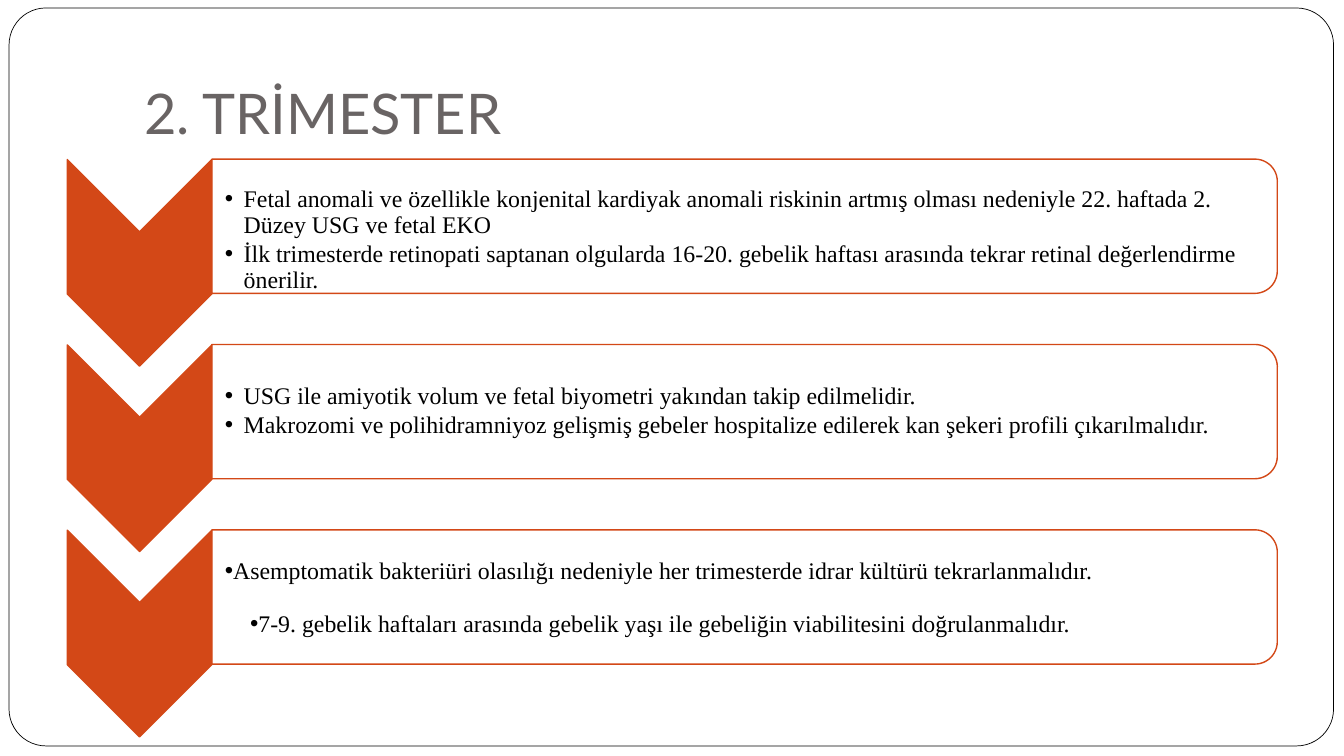
from dataclasses import dataclass

from lxml import etree
from pptx import Presentation
from pptx.dml.color import RGBColor
from pptx.enum.shapes import MSO_SHAPE
from pptx.enum.text import MSO_ANCHOR, MSO_AUTO_SIZE, PP_ALIGN
from pptx.oxml.ns import qn
from pptx.shapes.autoshape import Shape
from pptx.slide import Slide
from pptx.text.text import TextFrame
from pptx.util import Pt

ROUND_RECT = MSO_SHAPE.ROUNDED_RECTANGLE
CHEVRON = MSO_SHAPE.CHEVRON
PANEL = MSO_SHAPE.ROUND_2_SAME_RECTANGLE
BOTTOM, MIDDLE = MSO_ANCHOR.BOTTOM, MSO_ANCHOR.MIDDLE
NO_FIT = MSO_AUTO_SIZE.NONE
LEFT = PP_ALIGN.LEFT
COMPARISON_LAYOUT = 4
ROW_PITCH = 132.4


@dataclass(frozen=True)
class Theme:
    paper: RGBColor = RGBColor(0xFF, 0xFF, 0xFF)
    ink: RGBColor = RGBColor(0x00, 0x00, 0x00)
    accent: RGBColor = RGBColor(0xD3, 0x48, 0x17)
    heading: RGBColor = RGBColor(0x69, 0x64, 0x64)
    title_font: str = "Lato"
    body_font: str = "Times New Roman"
    title_size: float = 40
    body_size: float = 17


@dataclass(frozen=True)
class Box:
    left: float
    top: float
    width: float
    height: float


@dataclass(frozen=True)
class Bullet:
    text: str
    margin: float = 13.5
    hanging: float = 13.5
    line_spacing: float = 0.9
    after: float = 2.55


@dataclass(frozen=True)
class Step:
    placeholder: int
    bullets: tuple[Bullet, ...]
    inset_top: float = 0.7


THEME = Theme()
STEPS = (
    Step(1, (
        Bullet("Fetal anomali ve özellikle konjenital kardiyak anomali riskinin artmış "
               "olması nedeniyle 22. haftada 2. Düzey USG ve fetal EKO"),
        Bullet("İlk trimesterde retinopati saptanan olgularda 16-20. gebelik haftası "
               "arasında tekrar retinal değerlendirme önerilir."),
    ), inset_top=21),
    Step(2, (
        Bullet("USG ile amiyotik volum ve fetal biyometri yakından takip edilmelidir."),
        Bullet("Makrozomi ve polihidramniyoz gelişmiş gebeler hospitalize edilerek "
               "kan şekeri profili çıkarılmalıdır."),
    )),
    Step(3, (
        Bullet("Asemptomatik bakteriüri olasılığı nedeniyle her trimesterde idrar "
               "kültürü tekrarlanmalıdır.",
               margin=0, hanging=0, line_spacing=1, after=20),
        Bullet("7-9. gebelik haftaları arasında gebelik yaşı ile gebeliğin "
               "viabilitesini doğrulanmalıdır.", margin=18, hanging=0),
    )),
)


def place(sp: Shape, box: Box) -> None:
    sp.left, sp.top = Pt(box.left), Pt(box.top)
    sp.width, sp.height = Pt(box.width), Pt(box.height)


def add_outline(s: Slide, kind: MSO_SHAPE, box: Box, fill: RGBColor, line: RGBColor,
                weight: float = 1, turn: float = 0) -> Shape:
    sp = s.shapes.add_shape(kind, Pt(box.left), Pt(box.top), Pt(box.width), Pt(box.height))
    sp.shadow.inherit = False
    sp.rotation = turn
    sp.fill.solid()
    sp.fill.fore_color.rgb = fill
    sp.line.color.rgb = line
    sp.line.width = Pt(weight)
    return sp


def set_frame(tf: TextFrame, anchor: MSO_ANCHOR,
              insets: tuple[float, float, float, float]) -> None:
    """Insets run left, top, right, bottom."""
    tf.word_wrap = True
    tf.auto_size = NO_FIT
    tf.vertical_anchor = anchor
    tf.margin_left, tf.margin_top, tf.margin_right, tf.margin_bottom = map(Pt, insets)


def write_text(tf: TextFrame, text: str, *, font: str, size: float, color: RGBColor,
               bullet: Bullet | None = None) -> None:
    """Fill the empty first paragraph, or add a new one."""
    p = tf.paragraphs[0] if not tf.text else tf.add_paragraph()
    p.alignment = LEFT
    p.space_before = Pt(0)
    r = p.add_run()
    r.text = text
    r.font.name, r.font.size, r.font.bold = font, Pt(size), False
    r.font.color.rgb = color
    if bullet:
        p.line_spacing = bullet.line_spacing
        p.space_after = Pt(bullet.after)
        pPr = p._p.get_or_add_pPr()
        pPr.set("marL", str(Pt(bullet.margin)))
        pPr.set("indent", str(Pt(-bullet.hanging)))
        etree.SubElement(pPr, qn("a:buChar")).set("char", "•")


def bring_to_front(sp: Shape) -> None:
    sp.element.getparent().append(sp.element)


def add_title(s: Slide, text: str) -> None:
    title = s.shapes.title
    place(title, Box(95.8, 21.6, 815.8, 90))
    set_frame(title.text_frame, BOTTOM, (7.2, 3.6, 7.2, 7.2))
    write_text(title.text_frame, text, font=THEME.title_font, size=THEME.title_size,
               color=THEME.heading)
    bring_to_front(title)


def add_step(s: Slide, step: Step, offset: float) -> None:
    add_outline(s, CHEVRON, Box(25.9, 136.1 + offset, 147.6, 103.3),
                THEME.accent, THEME.accent, turn=90)
    panel = add_outline(s, PANEL, Box(483.9, -218.9 + offset, 95.9, 761),
                        THEME.paper, THEME.accent, turn=90)
    color = panel.element.spPr.find(qn("a:solidFill"))[0]
    etree.SubElement(color, qn("a:alpha")).set("val", "90000")

    body = s.placeholders[step.placeholder]
    place(body, Box(151.2, 118.2 + offset, 756, 86.4))
    set_frame(body.text_frame, MIDDLE, (9.4, step.inset_top, 0.7, 0.7))
    for bullet in step.bullets:
        write_text(body.text_frame, bullet.text, font=THEME.body_font,
                   size=THEME.body_size, color=THEME.ink, bullet=bullet)
    bring_to_front(body)


def main() -> None:
    prs = Presentation()
    prs.slide_width, prs.slide_height = Pt(960), Pt(540)
    s = prs.slides.add_slide(prs.slide_layouts[COMPARISON_LAYOUT])
    frame = add_outline(s, ROUND_RECT, Box(6.5, 5.7, 946.1, 527.1),
                        THEME.paper, THEME.ink, weight=0.5)
    frame.adjustments[0] = 0.05
    add_title(s, "2. TRİMESTER")
    for row, step in enumerate(STEPS):
        add_step(s, step, row * ROW_PITCH)
    unused = s.placeholders[4].element
    unused.getparent().remove(unused)
    prs.save("out.pptx")


if __name__ == "__main__":
    main()
